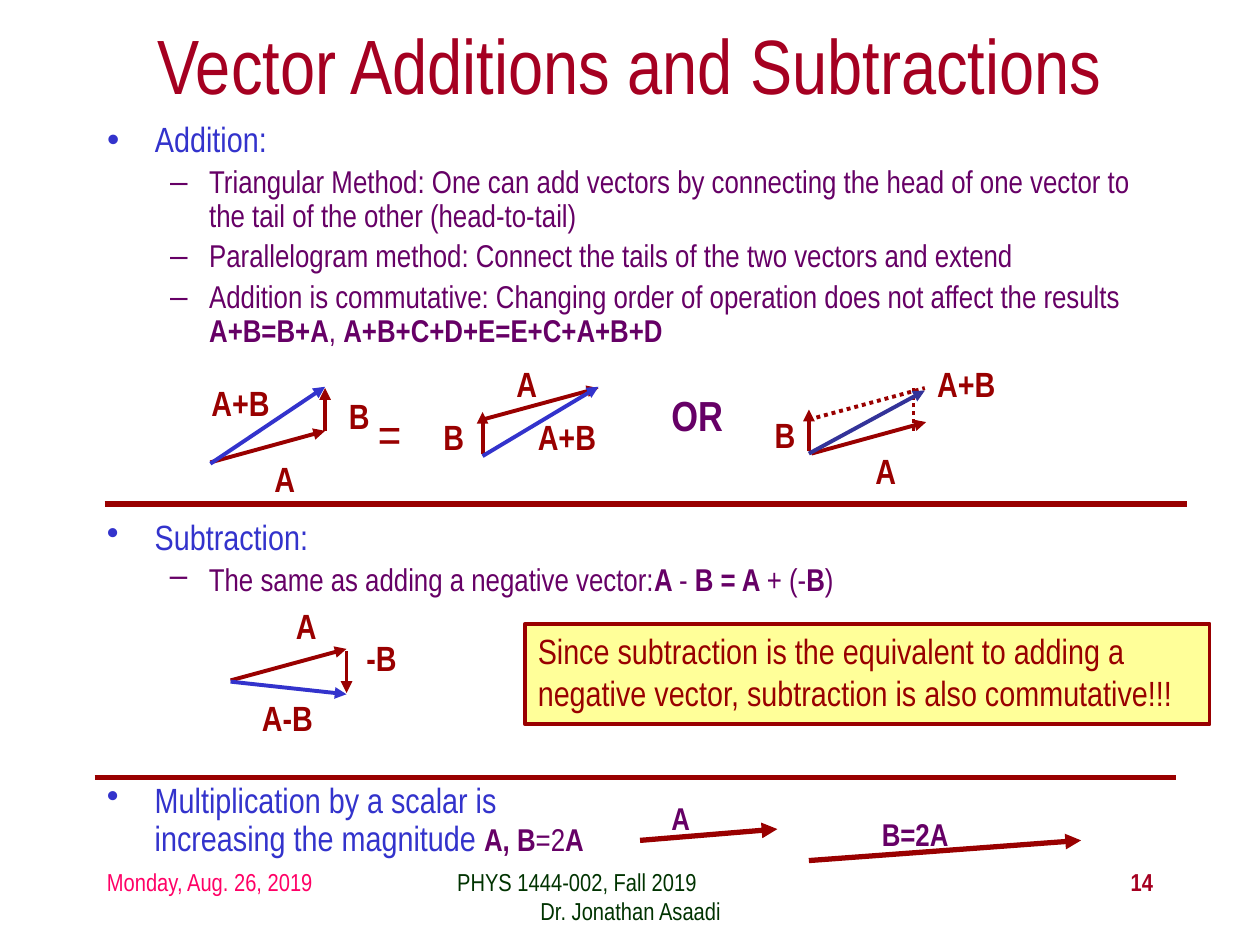
from lxml import etree
from pptx import Presentation
from pptx import util as u
from pptx.dml.color import RGBColor
from pptx.enum import dml, shapes, text
from pptx.oxml.ns import qn

FONT = "Arial Narrow"
CRIMSON = RGBColor(0xA5, 0x00, 0x21)
MAROON = RGBColor(0x99, 0x00, 0x00)
BLUE = RGBColor(0x33, 0x33, 0xCC)
NAVY = RGBColor(0x33, 0x33, 0x99)
PURPLE = RGBColor(0x66, 0x00, 0x66)
PINK = RGBColor(0xFF, 0x00, 0x66)
GREEN = RGBColor(0x00, 0x33, 0x00)
YELLOW = RGBColor(0xFF, 0xFF, 0x99)

LEVELS = [("•", 0.38, -0.38, 20, BLUE), ("–", 0.81, -0.31, 18, PURPLE)]

ADDITION = [
    (0, [("Addition:", False)]),
    (1, [("Triangular Method: One can add vectors by connecting the head of one "
          "vector to the tail of the other (head-to-tail)", False)]),
    (1, [("Parallelogram method: Connect the tails of the two vectors and extend", False)]),
    (1, [("Addition is commutative: Changing order of operation does not affect "
          "the results ", False),
         ("A+B=B+A", True), (", ", False), ("A+B+C+D+E=E+C+A+B+D", True)]),
]
SUBTRACTION = [
    (0, [("Subtraction:", False)]),
    (1, [("The same as adding a negative vector:", False), ("A ", True), ("- ", False),
         ("B = A ", True), ("+ (-", False), ("B", True), (")", False)]),
]
MULTIPLICATION = [
    (0, [("Multiplication by a scalar is increasing the magnitude ", False),
         ("A, B", True), ("=2", False), ("A", True)]),
]

VECTORS = [
    (1.67, 3.67, 2.58, 3.42, MAROON), (2.58, 3.42, 2.58, 3.08, MAROON),
    (3.83, 3.33, 4.75, 3.08, MAROON), (3.83, 3.6, 3.83, 3.27, MAROON),
    (6.44, 3.6, 7.35, 3.35, MAROON), (6.42, 3.58, 6.42, 3.25, MAROON),
    (6.42, 3.6, 7.34, 3.1, NAVY),
    (1.83, 5.4, 2.75, 5.15, MAROON), (2.75, 5.17, 2.75, 5.5, MAROON),
    (1.67, 3.68, 2.58, 3.07, BLUE), (3.83, 3.62, 4.75, 3.07, BLUE),
    (1.83, 5.41, 2.75, 5.51, BLUE),
]
SCALED_VECTORS = [(5.08, 6.67, 6.17, 6.58), (6.42, 6.83, 8.58, 6.67)]
DOTTED_SIDES = [(7.25, 3.42, 7.25, 3.08), (6.42, 3.33, 7.34, 3.08)]
RULES = [(0.83, 4, 9.42, 4), (0.75, 6.17, 9.33, 6.17)]

VECTOR_LABELS = [
    ("A", 2.08, 3.58, 0.37), ("B", 2.67, 3.08, 0.37), ("A+B", 1.58, 2.98, 0.66),
    ("A", 4, 2.83, 0.37), ("B", 3.42, 3.25, 0.37), ("A+B", 4.17, 3.25, 0.66),
    ("A", 6.85, 3.52, 0.37), ("B", 6.05, 3.23, 0.37), ("A+B", 7.34, 2.83, 0.66),
    ("A", 2.25, 4.75, 0.37), ("-B", 2.81, 5, 0.44), ("A-B", 1.98, 5.48, 0.61),
]


def style(p, size, color, bold=False):
    for r in p.runs:
        r.font.name = FONT
        r.font.size = u.Pt(size)
        r.font.bold = bold
        r.font.color.rgb = color


def place(sp, x, y, w, h):
    sp.left, sp.top, sp.width, sp.height = (u.Inches(v) for v in (x, y, w, h))


def add_box(s, x, y, w, h):
    sp = s.shapes.add_textbox(*(u.Inches(v) for v in (x, y, w, h)))
    sp.text_frame.word_wrap = True
    return sp


def add_label(s, label, x, y, w, h=0.43, size=20, color=MAROON, bold=True):
    tf = add_box(s, x, y, w, h).text_frame
    tf.word_wrap = False
    tf.auto_size = text.MSO_AUTO_SIZE.SHAPE_TO_FIT_TEXT
    tf.text = label
    style(tf.paragraphs[0], size, color, bold)


def add_line(s, x1, y1, x2, y2, color=MAROON, width=2.25, arrow=False, dotted=False):
    ends = [u.Inches(v) for v in (x1, y1, x2, y2)]
    line = s.shapes.add_connector(shapes.MSO_CONNECTOR.STRAIGHT, *ends)
    line.line.color.rgb = color
    line.line.width = u.Pt(width)
    if dotted:
        line.line.dash_style = dml.MSO_LINE.ROUND_DOT
    sp_pr = line._element.spPr
    if arrow:
        etree.SubElement(sp_pr.find(qn("a:ln")), qn("a:tailEnd"), type="triangle")
    etree.SubElement(sp_pr, qn("a:effectLst"))


def fill_list(sp, items):
    tf = sp.text_frame
    tf.auto_size = text.MSO_AUTO_SIZE.NONE
    for i, (level, runs) in enumerate(items):
        p = tf.add_paragraph() if i else tf.paragraphs[0]
        bullet, margin, indent, size, color = LEVELS[level]
        p.level = level
        p_pr = p._p.get_or_add_pPr()
        p_pr.set("marL", str(u.Inches(margin)))
        p_pr.set("indent", str(u.Inches(indent)))
        etree.SubElement(p_pr, qn("a:buChar"), char=bullet)
        p.line_spacing = 0.9
        p.space_before = u.Pt(size * 0.2 if i else 0)
        for words, bold in runs:
            p.add_run().text = words
        style(p, size, color)
        for r, (_, bold) in zip(p.runs, runs):
            if bold:
                r.font.bold = True
                r.font.size = u.Pt(18)
                r.font.color.rgb = PURPLE
            elif r.text == "=2":
                r.font.size = u.Pt(18)
                r.font.color.rgb = PURPLE


def add_title(s, words):
    sp = s.shapes.title
    place(sp, 0.75, 0.17, 8.5, 0.67)
    tf = sp.text_frame
    tf.text = words
    tf.auto_size = text.MSO_AUTO_SIZE.NONE
    tf.vertical_anchor = text.MSO_ANCHOR.MIDDLE
    tf.paragraphs[0].alignment = text.PP_ALIGN.CENTER
    style(tf.paragraphs[0], 44, CRIMSON)


def add_footer(s, words, x, w, color, align, bold=False):
    tf = add_box(s, x, 6.83, w, 0.5).text_frame
    tf.text = words
    for p in tf.paragraphs:
        p.alignment = align
        style(p, 14, color, bold)
    return tf


def add_callout(s, words):
    box = [u.Inches(v) for v in (4.17, 4.95, 5.43, 0.8)]
    sp = s.shapes.add_shape(shapes.MSO_SHAPE.RECTANGLE, *box)
    sp.shadow.inherit = False
    sp.fill.solid()
    sp.fill.fore_color.rgb = YELLOW
    sp.line.color.rgb = MAROON
    sp.line.width = u.Pt(2.25)
    tf = sp.text_frame
    tf.word_wrap = True
    tf.vertical_anchor = text.MSO_ANCHOR.TOP
    tf.text = words
    tf.paragraphs[0].alignment = text.PP_ALIGN.LEFT
    style(tf.paragraphs[0], 20, MAROON)


def main():
    prs = Presentation()
    prs.slide_width, prs.slide_height = u.Inches(10), u.Inches(7.5)
    s = prs.slides.add_slide(prs.slide_layouts[1])

    add_title(s, "Vector Additions and Subtractions")
    body = s.placeholders[1]
    place(body, 0.75, 0.92, 8.5, 1.83)
    fill_list(body, ADDITION)
    fill_list(add_box(s, 0.75, 4.08, 8.5, 0.83), SUBTRACTION)
    fill_list(add_box(s, 0.75, 6.17, 4, 0.67), MULTIPLICATION)

    for rule in RULES:
        add_line(s, *rule, width=3)
    for side in DOTTED_SIDES:
        add_line(s, *side, dotted=True)
    for vector in VECTORS:
        add_line(s, *vector, arrow=True)
    for vector in SCALED_VECTORS:
        add_line(s, *vector, width=3, arrow=True)

    for label in VECTOR_LABELS:
        add_label(s, *label)
    add_label(s, "=", 2.9, 3.15, 0.39, 0.57, size=28, bold=False)
    add_label(s, "OR", 5.23, 3.04, 0.61, 0.5, size=24, color=PURPLE)
    add_label(s, "A", 5.23, 6.29, 0.35, 0.4, size=18, color=PURPLE)
    add_label(s, "B=2A", 6.9, 6.42, 0.73, 0.4, size=18, color=PURPLE)
    add_callout(s, "Since subtraction is the equivalent to adding a negative vector, "
                   "subtraction is also commutative!!!")

    add_footer(s, "Monday, Aug. 26, 2019", 0.75, 2.08, PINK, text.PP_ALIGN.LEFT)
    course = add_footer(s, "PHYS 1444-002, Fall 2019\nDr. Jonathan Asaadi", 3.42, 3.17,
                        GREEN, text.PP_ALIGN.CENTER).paragraphs[0]
    course.alignment = text.PP_ALIGN.LEFT
    course._p.get_or_add_pPr().set("marL", str(u.Inches(0.11)))
    add_footer(s, "14", 7.17, 2.08, CRIMSON, text.PP_ALIGN.RIGHT, bold=True)
    prs.save("out.pptx")


if __name__ == "__main__":
    main()
